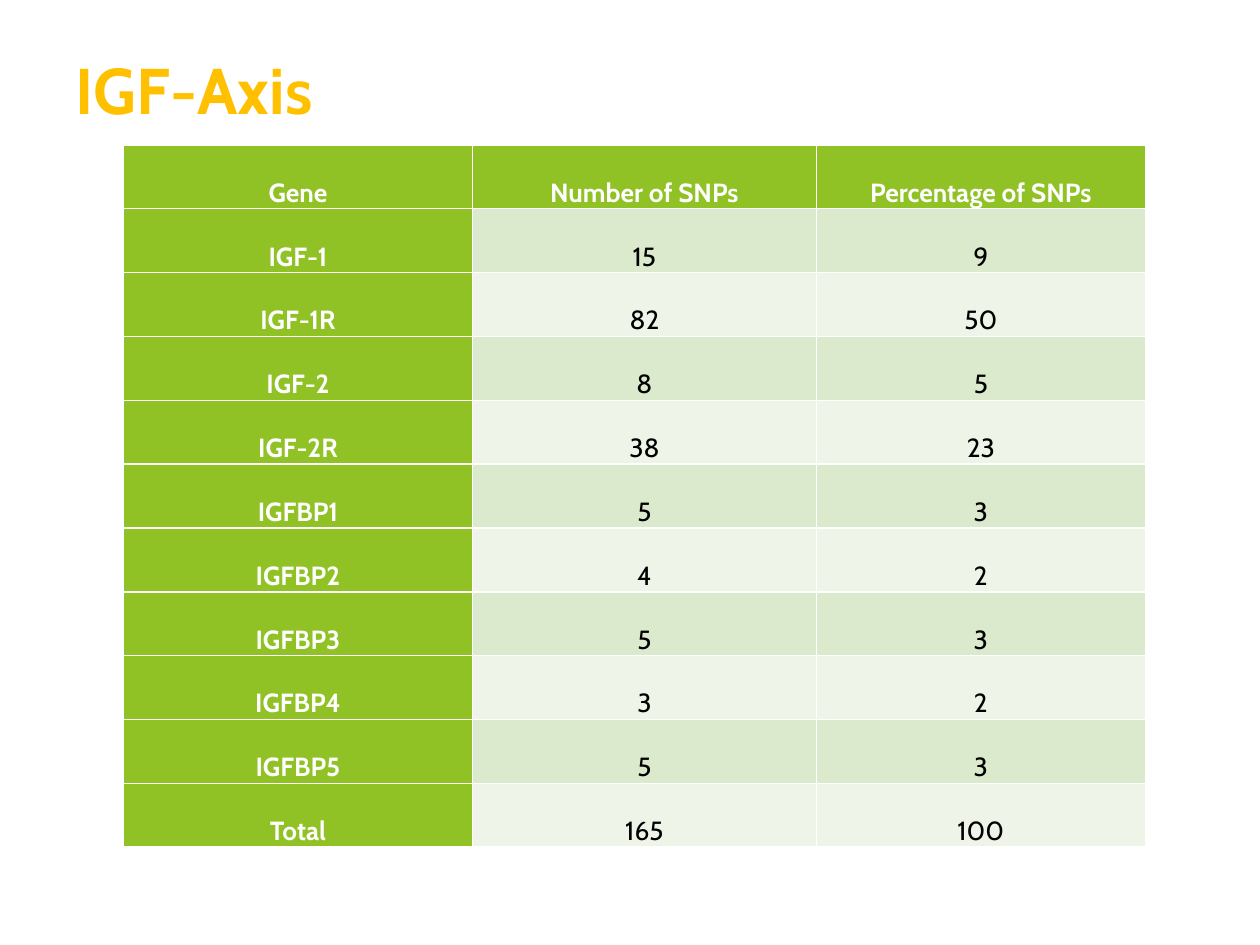
from pptx import Presentation
from pptx.dml.color import RGBColor
from pptx.enum.shapes import MSO_SHAPE
from pptx.enum.text import MSO_ANCHOR, MSO_AUTO_SIZE, PP_ALIGN
from pptx.util import Inches, Pt

RECT = MSO_SHAPE.RECTANGLE
MIDDLE = MSO_ANCHOR.MIDDLE
NO_FIT = MSO_AUTO_SIZE.NONE
LEFT, CENTER = PP_ALIGN.LEFT, PP_ALIGN.CENTER

TITLE = "IGF-Axis"
ROWS = [
    ("Gene", "Number of SNPs", "Percentage of SNPs"),
    ("IGF-1", "15", "9"),
    ("IGF-1R", "82", "50"),
    ("IGF-2", "8", "5"),
    ("IGF-2R", "38", "23"),
    ("IGFBP1", "5", "3"),
    ("IGFBP2", "4", "2"),
    ("IGFBP3", "5", "3"),
    ("IGFBP4", "3", "2"),
    ("IGFBP5", "5", "3"),
    ("Total", "165", "100"),
]
WIDTHS = [2.77, 2.73, 2.61]
HIGH = 0.47
COLORS = {"white": "FFFFFF", "black": "000000", "gold": "FFC000",
          "green": "90C226", "odd": "DBE9CD", "even": "EEF4E8"}
CELL = {"vertical_anchor": MIDDLE, "margin_left": Inches(0.07),
        "margin_right": Inches(0.07), "margin_top": 0, "margin_bottom": 0}


def color(name):
    """Return the named colour."""
    return RGBColor.from_string(COLORS[name])


def assign(item, values):
    """Set each attribute of the item from a dict."""
    for key, value in values.items():
        setattr(item, key, value)


def paint(item, name):
    """Fill the item with a solid named colour."""
    item.fill.solid()
    item.fill.fore_color.rgb = color(name)


def write(frame, text, align, size, bold, name, space):
    """Put one formatted paragraph in a text frame."""
    par = frame.paragraphs[0]
    assign(par, {"alignment": align, "line_spacing": space})
    run = par.add_run()
    run.text = text
    assign(run.font, {"name": "Cabin", "size": Pt(size), "bold": bold})
    run.font.color.rgb = color(name)


def add_back(slide):
    """Lay the white panel behind everything else."""
    box = [Inches(n) for n in (-0.12, -0.11, 10.39, 7.72)]
    panel = slide.shapes.add_shape(RECT, *box)
    panel.shadow.inherit = False
    paint(panel, "white")
    panel.line.fill.background()
    slide.shapes.title.element.addprevious(panel.element)


def add_title(slide):
    """Place and format the slide title."""
    title = slide.shapes.title
    assign(title, {"left": Inches(0.5), "top": Inches(0.36),
                   "width": Inches(9.22), "height": Inches(0.69)})
    frame = title.text_frame
    assign(frame, {"vertical_anchor": MIDDLE, "auto_size": NO_FIT,
                   "word_wrap": True})
    write(frame, TITLE, LEFT, 36.9, True, "gold", 1.0)


def add_genes(slide):
    """Add the table of genes and their SNP counts."""
    box = [Inches(n) for n in (0.98, 1.15, sum(WIDTHS), HIGH * len(ROWS))]
    table = slide.shapes.add_table(len(ROWS), len(WIDTHS), *box).table
    table.first_col = True
    for col, width in zip(table.columns, WIDTHS):
        col.width = Inches(width)
    for r, row in enumerate(ROWS):
        table.rows[r].height = Inches(HIGH)
        for c, text in enumerate(row):
            cell = table.cell(r, c)
            head = r == 0 or c == 0
            assign(cell, CELL)
            paint(cell, "green" if head else "odd" if r % 2 else "even")
            ink = "white" if head else "black"
            write(cell.text_frame, text, CENTER, 15, head, ink, 2.0)


def main():
    """Build the slide and save it."""
    deck = Presentation()
    assign(deck, {"slide_width": Inches(10), "slide_height": Inches(7.5)})
    slide = deck.slides.add_slide(deck.slide_layouts[5])
    add_back(slide)
    add_title(slide)
    add_genes(slide)
    deck.save("out.pptx")


if __name__ == "__main__":
    main()
